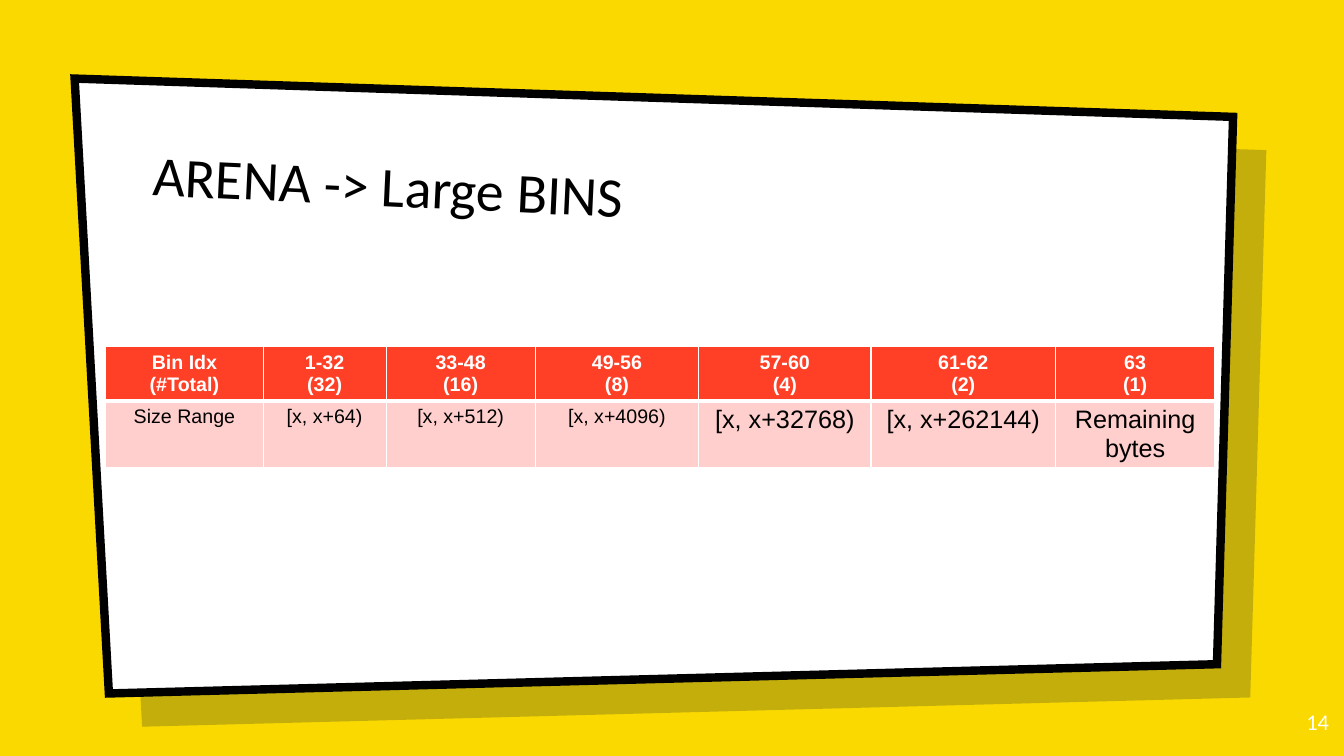
from dataclasses import dataclass

from lxml.etree import SubElement
from pptx import Presentation
from pptx.dml.color import RGBColor
from pptx.enum.text import MSO_ANCHOR, MSO_AUTO_SIZE, PP_ALIGN
from pptx.oxml.ns import qn
from pptx.shapes.autoshape import Shape
from pptx.slide import Slide
from pptx.table import _Cell as Cell
from pptx.text.text import TextFrame
from pptx.util import Pt

PX = 9144  # EMU in one px, 100 px to the inch

YELLOW = RGBColor(0xFA, 0xD9, 0x00)
NAVY = RGBColor(0x00, 0x19, 0x36)
WHITE = RGBColor(0xFF, 0xFF, 0xFF)
BLACK = RGBColor(0x00, 0x00, 0x00)
RED = RGBColor(0xFF, 0x40, 0x26)
PINK = RGBColor(0xFF, 0xCF, 0xCD)


@dataclass
class Column:
    width: int
    head: str
    range: str
    size: int = 14


CORNERS = [(74, 78), (1223, 116), (1207, 659), (108, 688)]
OFFSET = 33
ROW = 41
COLUMNS = [
    Column(156, "Bin Idx\n(#Total)", "Size Range"),
    Column(122, "1-32\n(32)", "[x, x+64)"),
    Column(148, "33-48\n(16)", "[x, x+512)"),
    Column(162, "49-56\n(8)", "[x, x+4096)"),
    Column(171, "57-60\n(4)", "[x, x+32768)", 18),
    Column(183, "61-62\n(2)", "[x, x+262144)", 18),
    Column(158, "63\n(1)", "Remaining bytes", 18),
]


def write(frame: TextFrame, text: str, *, size: int, color: RGBColor,
          font: str = "Calibri", bold: bool = False,
          align: PP_ALIGN = PP_ALIGN.LEFT) -> None:
    frame.text = text
    frame.word_wrap = True
    for para in frame.paragraphs:
        para.alignment = align
        for run in para.runs:
            run.font.size = Pt(size)
            run.font.name = font
            run.font.bold = bold
            run.font.color.rgb = color


def inset(frame: TextFrame, anchor: MSO_ANCHOR) -> None:
    """Give the frame even margins and a fixed size."""
    frame.auto_size = MSO_AUTO_SIZE.NONE
    frame.vertical_anchor = anchor
    frame.margin_left = frame.margin_right = 10 * PX
    frame.margin_top = frame.margin_bottom = 10 * PX


def place(shape: Shape, left: int, top: int, width: int, height: int) -> None:
    shape.left, shape.top = left * PX, top * PX
    shape.width, shape.height = width * PX, height * PX


def panel(slide: Slide, shift: int, color: RGBColor) -> Shape:
    """Draw the slanted sheet, moved right and down by shift."""
    first, *rest = [(x + shift, y + shift) for x, y in CORNERS]
    pen = slide.shapes.build_freeform(*first, scale=PX)
    pen.add_line_segments(rest, close=True)
    shape = pen.convert_to_shape()
    shape.shadow.inherit = False
    shape.fill.solid()
    shape.fill.fore_color.rgb = color
    shape.line.fill.background()
    return shape


def edge(cell: Cell, bottom: int) -> None:
    """Give the cell white borders, with its own width at the bottom."""
    props = cell._tc.get_or_add_tcPr()
    for side, width in (("L", 1), ("R", 1), ("T", 1), ("B", bottom)):
        line = SubElement(props, qn(f"a:ln{side}"), w=str(Pt(width)))
        fill = SubElement(line, qn("a:solidFill"))
        SubElement(fill, qn("a:srgbClr"), val=str(WHITE))


def draw_bins(slide: Slide) -> None:
    total = sum(col.width for col in COLUMNS)
    table = slide.shapes.add_table(2, len(COLUMNS), 105 * PX, 344 * PX,
                                   total * PX, 2 * ROW * PX).table
    table.horz_banding = False
    for i, col in enumerate(COLUMNS):
        table.columns[i].width = col.width * PX
        head, body = table.cell(0, i), table.cell(1, i)
        for cell, fill, bottom in ((head, RED, 3), (body, PINK, 1)):
            edge(cell, bottom)
            cell.fill.solid()
            cell.fill.fore_color.rgb = fill
        write(head.text_frame, col.head, size=14, color=WHITE, font="Arial",
              bold=True, align=PP_ALIGN.CENTER)
        write(body.text_frame, col.range, size=col.size, color=BLACK,
              font="Arial", align=PP_ALIGN.CENTER)


def main() -> None:
    deck = Presentation()
    deck.slide_width, deck.slide_height = 1333 * PX, 750 * PX
    slide = deck.slides.add_slide(deck.slide_layouts[5])
    slide.background.fill.solid()
    slide.background.fill.fore_color.rgb = YELLOW

    shade = panel(slide, OFFSET, NAVY)
    tint = shade.fill._xPr.find(f".//{qn('a:srgbClr')}")
    SubElement(tint, qn("a:alpha"), val="22000")
    paper = panel(slide, 0, WHITE)
    paper.line.color.rgb = BLACK
    paper.line.width = Pt(6)
    SubElement(paper.line._get_or_add_ln(), qn("a:miter"), lim="800000")

    title = slide.shapes.title
    paper.element.addnext(title.element)
    place(title, 142, 128, 1025, 111)
    title.rotation = 2.7
    inset(title.text_frame, MSO_ANCHOR.BOTTOM)
    write(title.text_frame, "ARENA -> Large BINS", size=40, color=BLACK)

    number = slide.shapes.add_textbox(0, 0, 0, 0)
    place(number, 1248, 693, 80, 57)
    inset(number.text_frame, MSO_ANCHOR.TOP)
    write(number.text_frame, "14", size=16, color=WHITE, align=PP_ALIGN.RIGHT)

    draw_bins(slide)
    deck.save("out.pptx")


if __name__ == "__main__":
    main()
